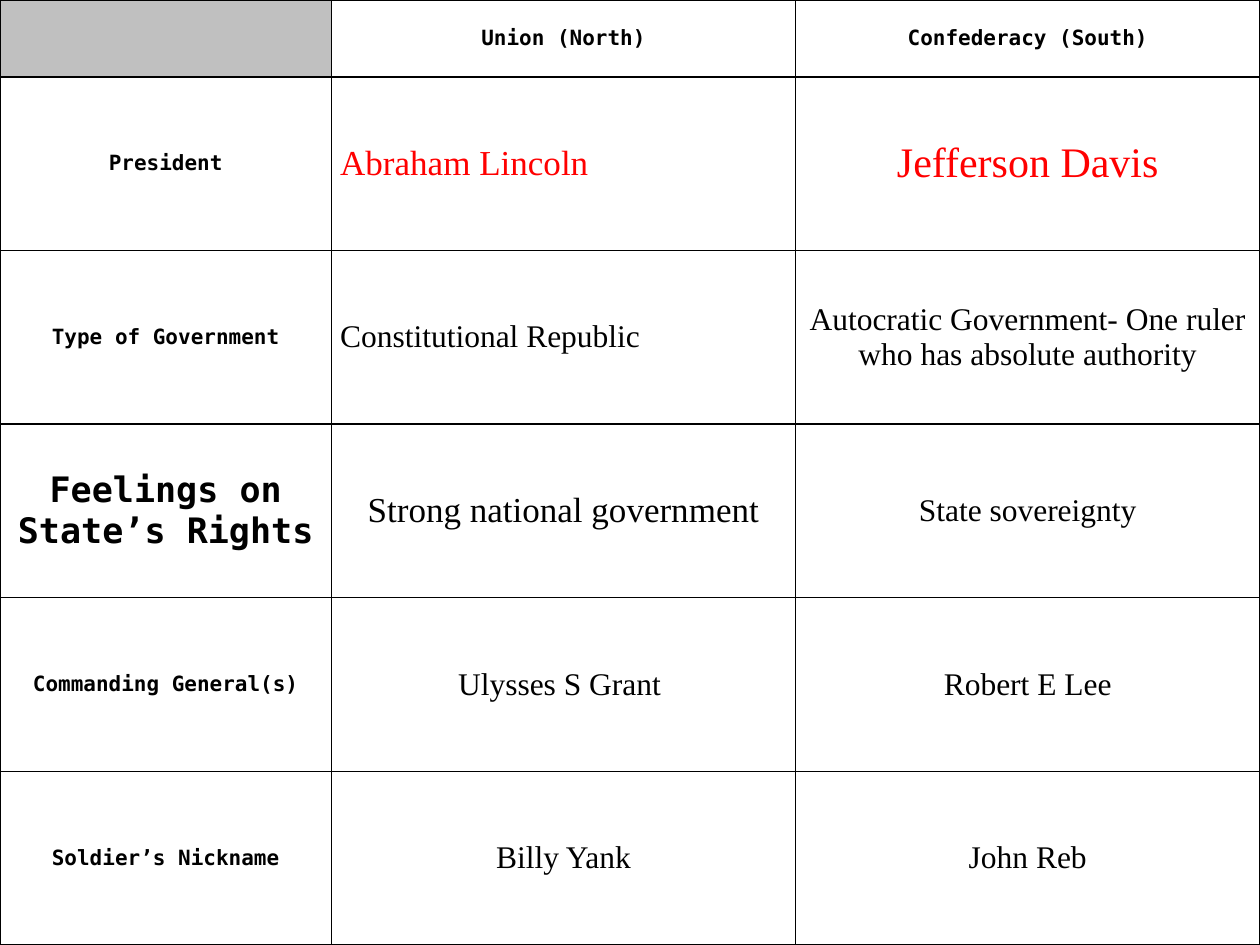
from dataclasses import dataclass

from lxml.etree import SubElement
from pptx import Presentation
from pptx.dml.color import RGBColor
from pptx.enum.text import MSO_ANCHOR as Anchor, PP_ALIGN as Align
from pptx.oxml.ns import qn
from pptx.util import Inches, Pt


@dataclass(frozen=True)
class Theme:
    ink: str = "000000"
    accent: str = "FF0000"
    corner: str = "C0C0C0"
    label_font: str = "DejaVu Sans Mono"
    answer_font: str = "Times New Roman"
    label: int = 12
    answer: int = 18
    large: int = 20
    huge: int = 24
    border: int = 1
    inset: float = 0.07


class SlideBuilder:
    def __init__(self, theme, width, height):
        self.theme = theme
        self.deck = Presentation()
        self.deck.slide_width = self.width = Inches(width)
        self.deck.slide_height = self.height = Inches(height)
        self.page = self.deck.slides.add_slide(self.deck.slide_layouts[6])

    def table(self, rows, side_share, header_share):
        row_count, column_count = len(rows), len(rows[0])
        frame = self.page.shapes.add_table(
            row_count, column_count, 0, 0, self.width, self.height
        )
        table = frame.table
        table.first_row = table.horz_banding = False
        self.share(table.columns, "width", self.width, side_share)
        self.share(table.rows, "height", self.height, header_share)
        for row, texts in enumerate(rows):
            for column, text in enumerate(texts):
                cell = table.cell(row, column)
                self.border(cell)
                cell.fill.background()
                if text:
                    is_label = row == 0 or column == 0
                    self.label(cell, text, is_label)
        return table

    def share(self, bands, side, total, first_share):
        rest = (1 - first_share) / (len(bands) - 1)
        for index, band in enumerate(bands):
            setattr(band, side, int(total * (rest if index else first_share)))

    def border(self, cell):
        properties = cell._tc.get_or_add_tcPr()
        for side in ("a:lnL", "a:lnR", "a:lnT", "a:lnB"):
            line = SubElement(properties, qn(side), w=str(Pt(self.theme.border)))
            fill = SubElement(line, qn("a:solidFill"))
            SubElement(fill, qn("a:srgbClr"), val=self.theme.ink)

    def label(self, cell, text, is_label):
        theme = self.theme
        inset = Inches(theme.inset)
        layout = {
            "vertical_anchor": Anchor.MIDDLE,
            "margin_left": inset,
            "margin_right": inset,
            "margin_top": 0,
            "margin_bottom": 0,
        }
        for name, value in layout.items():
            setattr(cell, name, value)
        para = cell.text_frame.paragraphs[0]
        para.alignment = Align.CENTER
        para.add_run().text = text
        self.style(
            cell,
            name=theme.label_font if is_label else theme.answer_font,
            size=Pt(theme.label if is_label else theme.answer),
            bold=is_label,
        )
        self.color(cell, theme.ink)

    def style(self, cell, **values):
        span = cell.text_frame.paragraphs[0].runs[0]
        for name, value in values.items():
            setattr(span.font, name, value)

    def color(self, cell, value):
        span = cell.text_frame.paragraphs[0].runs[0]
        span.font.color.rgb = RGBColor.from_string(value)

    def shade(self, cell, value):
        cell.fill.solid()
        cell.fill.fore_color.rgb = RGBColor.from_string(value)


COMPARISON = [
    ("", "Union (North)", "Confederacy (South)"),
    ("President", "Abraham Lincoln", "Jefferson Davis"),
    (
        "Type of Government",
        "Constitutional Republic",
        "Autocratic Government- One ruler who has absolute authority",
    ),
    ("Feelings on State’s Rights", "Strong national government", "State sovereignty"),
    ("Commanding General(s)", "Ulysses S Grant ", "Robert E Lee"),
    ("Soldier’s Nickname", "Billy Yank", "John Reb"),
]


def main():
    theme = Theme()
    builder = SlideBuilder(theme, 10, 7.5)
    table = builder.table(COMPARISON, side_share=2.63 / 10, header_share=0.61 / 7.5)
    builder.shade(table.cell(0, 0), theme.corner)

    sizes = {
        (1, 1): theme.large,
        (1, 2): theme.huge,
        (3, 0): theme.large,
        (3, 1): theme.large,
    }
    for place, size in sizes.items():
        builder.style(table.cell(*place), size=Pt(size))
    for column in (1, 2):
        builder.color(table.cell(1, column), theme.accent)
    for row in (1, 2):
        table.cell(row, 1).text_frame.paragraphs[0].alignment = Align.LEFT

    builder.deck.save("out.pptx")


if __name__ == "__main__":
    main()
